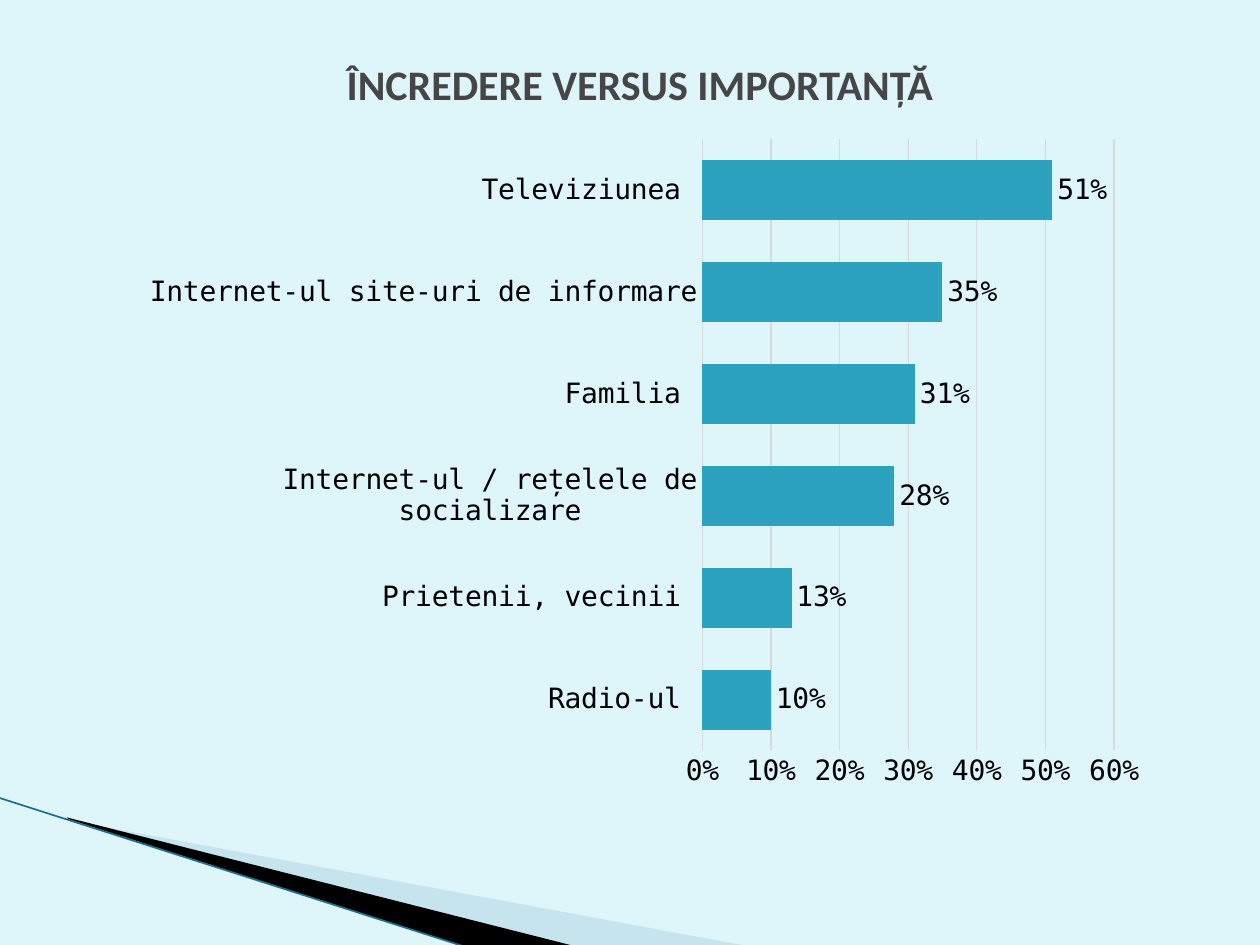
from lxml import etree
from pptx import Presentation
from pptx import util as u
from pptx.chart.data import CategoryChartData
from pptx.dml.color import RGBColor
from pptx.enum import chart as charts, shapes, text
from pptx.oxml import ns

SKY = RGBColor(0xDE, 0xF5, 0xFA)
MIST = RGBColor(0xA0, 0xCB, 0xDC)
BLACK = RGBColor(0, 0, 0)
DEEP_TEAL = RGBColor(0x1B, 0x70, 0x8B)
TEAL = RGBColor(0x2D, 0xA2, 0xBF)
CHARCOAL = RGBColor(0x46, 0x46, 0x46)
GRID = RGBColor(0xD9, 0xD9, 0xD9)

TITLE_FONT = {"name": "Calibri", "size": u.Pt(24), "bold": True}
CHART_FONT = {"name": "DejaVu Sans Mono", "size": u.Pt(16), "bold": False}

TRUST = {
    "Radio-ul ": 0.10,
    "Prietenii, vecinii ": 0.13,
    "Internet-ul / rețelele de socializare": 0.28,
    "Familia ": 0.31,
    "Internet-ul site-uri de informare": 0.35,
    "Televiziunea ": 0.51,
}


def apply(target, values):
    for name, value in values.items():
        setattr(target, name, value)


def style_font(font, values, color):
    apply(font, values)
    font.color.rgb = color


def style_line(line, color, width):
    line.color.rgb = color
    line.width = u.Pt(width)


class SlideBuilder:
    def __init__(self, deck):
        self.page = deck.slides.add_slide(deck.slide_layouts[6])
        fill = self.page.background.fill
        fill.solid()
        fill.fore_color.rgb = SKY

    def wedge(self, points, color, alpha=None):
        """Draw a filled outline; points are in cm, alpha in percent."""
        start, *rest = [(u.Cm(x), u.Cm(y)) for x, y in points]
        builder = self.page.shapes.build_freeform(*start)
        builder.add_line_segments(rest, close=True)
        shape = builder.convert_to_shape()
        shape.shadow.inherit = False
        shape.fill.solid()
        shape.fill.fore_color.rgb = color
        shape.line.fill.background()
        if alpha is not None:
            tint = shape.fill._xPr.find(".//" + ns.qn("a:srgbClr"))
            etree.SubElement(tint, ns.qn("a:alpha"), val=str(alpha * 1000))

    def line(self, start, end, color, width):
        ends = [u.Cm(value) for value in (*start, *end)]
        connector = self.page.shapes.add_connector(
            shapes.MSO_CONNECTOR.STRAIGHT, *ends)
        style_line(connector.line, color, width)
        etree.SubElement(connector._element.spPr, ns.qn("a:effectLst"))

    def title(self, wording, place):
        box = self.page.shapes.add_textbox(*map(u.Cm, place))
        apply(box.text_frame, {"word_wrap": True,
                               "vertical_anchor": text.MSO_ANCHOR.MIDDLE})
        para = box.text_frame.paragraphs[0]
        para.alignment = text.PP_ALIGN.CENTER
        span = para.add_run()
        span.text = wording
        style_font(span.font, TITLE_FONT, CHARCOAL)

    def bar_chart(self, values, place, plot):
        """Draw a bar chart; plot gives the inner plot area as fractions."""
        data = CategoryChartData(number_format="0%")
        data.categories = list(values)
        data.add_series("Series 1", list(values.values()))
        chart = self.page.shapes.add_chart(
            charts.XL_CHART_TYPE.BAR_CLUSTERED, *map(u.Cm, place), data).chart
        apply(chart, {"has_legend": False, "has_title": False})
        style_font(chart.font, CHART_FONT, BLACK)

        for axis in (chart.category_axis, chart.value_axis):
            apply(axis, {"major_tick_mark": charts.XL_TICK_MARK.NONE,
                         "minor_tick_mark": charts.XL_TICK_MARK.NONE})
            style_font(axis.tick_labels.font, CHART_FONT, BLACK)
        style_line(chart.category_axis.format.line, GRID, 0.75)
        scale = chart.value_axis
        apply(scale, {"minimum_scale": 0, "maximum_scale": 0.6,
                      "major_unit": 0.1})
        scale.format.line.fill.background()
        style_line(scale.major_gridlines.format.line, GRID, 0.75)

        bars = chart.plots[0]
        apply(bars, {"gap_width": 70, "vary_by_categories": False,
                     "has_data_labels": True})
        labels = bars.data_labels
        apply(labels, {"show_value": True,
                       "position": charts.XL_LABEL_POSITION.OUTSIDE_END})
        style_font(labels.font, CHART_FONT, BLACK)
        for part in (scale.tick_labels, labels):
            apply(part, {"number_format": "0%",
                         "number_format_is_linked": False})
        fill = bars.series[0].format.fill
        fill.solid()
        fill.fore_color.rgb = TEAL
        self.place_plot(chart, plot)

    def place_plot(self, chart, plot):
        area = chart._chartSpace.find(".//" + ns.qn("c:plotArea"))
        layout = area.find(ns.qn("c:layout"))
        if layout is None:
            layout = etree.Element(ns.qn("c:layout"))
            area.insert(0, layout)
        manual = etree.SubElement(layout, ns.qn("c:manualLayout"))
        settings = {"layoutTarget": "inner", "xMode": "edge", "yMode": "edge"}
        settings.update(zip("xywh", plot))
        for name, value in settings.items():
            etree.SubElement(manual, ns.qn("c:" + name), val=str(value))


def main():
    deck = Presentation()
    apply(deck, {"slide_width": u.Cm(25.4), "slide_height": u.Cm(19.05)})
    slide = SlideBuilder(deck)
    slide.wedge([(1.4, 16.54), (15.11, 19.08), (11.58, 19.08), (1.4, 16.51)],
                MIST, alpha=40)
    slide.wedge([(1.35, 16.48), (11.61, 19.08), (9.45, 19.1), (1.37, 16.51)],
                BLACK)
    slide.line((-0.03, 16.08), (9.42, 19.1), DEEP_TEAL, 0.95)
    slide.title("ÎNCREDERE VERSUS IMPORTANȚĂ", (1.47, 0.64, 22.86, 2.11))
    slide.bar_chart(TRUST, (2.54, 2.54, 20.75, 13.54),
                    plot=(0.56, 0.02, 0.4, 0.91))
    deck.save("out.pptx")


if __name__ == "__main__":
    main()
